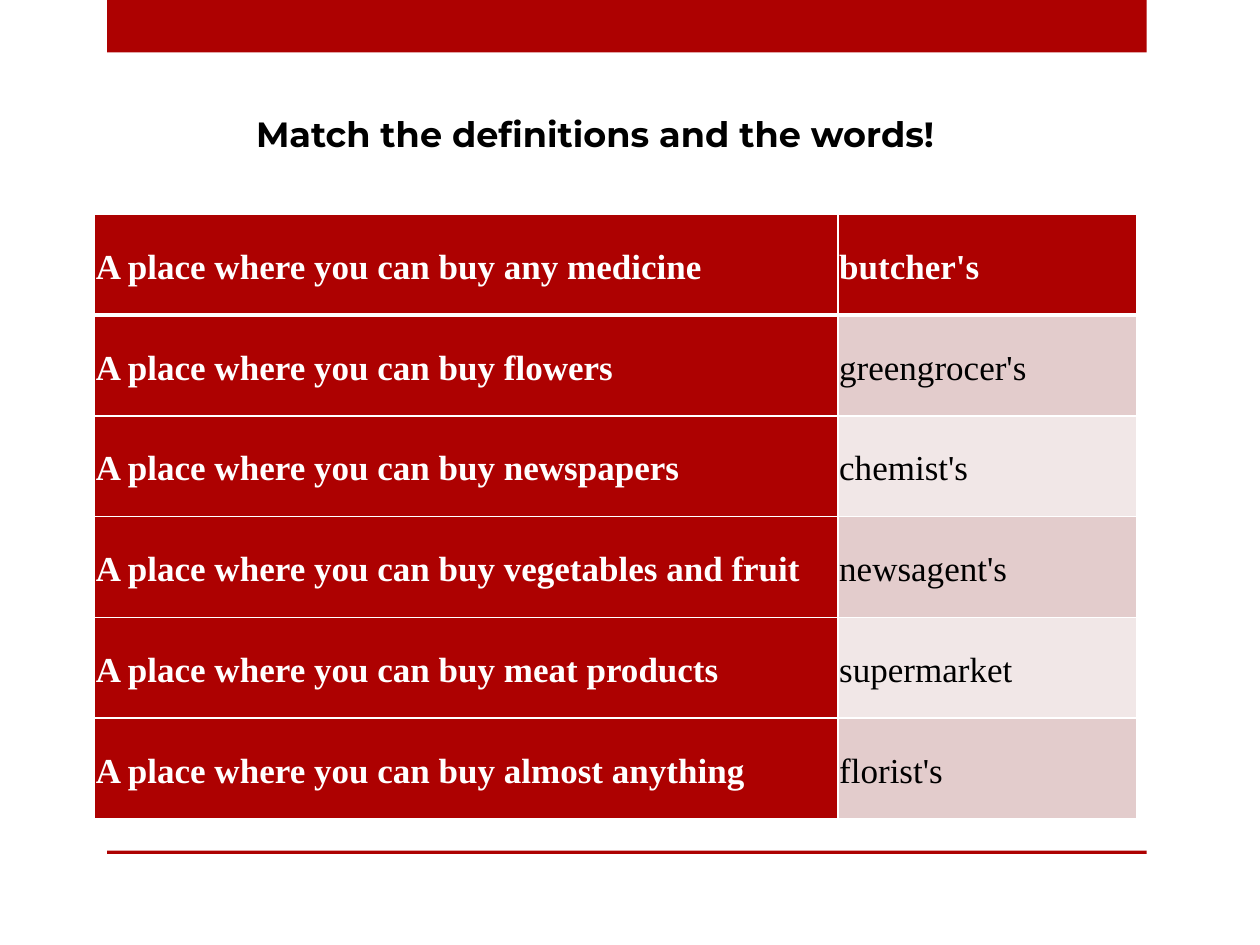
import pptx
import pptx.dml.color
import pptx.enum.shapes
import pptx.enum.text
import pptx.oxml
import pptx.oxml.ns
import pptx.util
from dataclasses import dataclass

Pt = pptx.util.Pt
ANCHOR = pptx.enum.text.MSO_ANCHOR
TITLE_ONLY = 5


@dataclass(frozen=True)
class Theme:
    red: str = "AD0101"
    white: str = "FFFFFF"
    black: str = "000000"
    bands: tuple = ("F1E7E7", "E3CCCC")
    heading_font: str = "Montserrat"
    table_font: str = "Times New Roman"
    text_size: int = 20
    thin_border: int = 1
    thick_border: int = 3


THEME = Theme()

MATCHES = [
    ("A place where you can buy any medicine", "butcher's"),
    ("A place where you can buy flowers", "greengrocer's"),
    ("A place where you can buy newspapers", "chemist's"),
    ("A place where you can buy vegetables and fruit", "newsagent's"),
    ("A place where you can buy meat products", "supermarket"),
    ("A place where you can buy almost anything", "florist's"),
]


def apply_format(target, values):
    for name, value in values.items():
        setattr(target, name, value)


def paint(fill, color):
    fill.solid()
    fill.fore_color.rgb = pptx.dml.color.RGBColor.from_string(color)


def write(frame, text, font, color, bold, paragraph_format):
    para = frame.paragraphs[0]
    apply_format(para, paragraph_format)
    span = para.add_run()
    span.text = text
    apply_format(span.font, {"name": font, "size": Pt(THEME.text_size), "bold": bold})
    span.font.color.rgb = pptx.dml.color.RGBColor.from_string(color)


def add_bar(page, top, height):
    bar = page.shapes.add_shape(
        pptx.enum.shapes.MSO_SHAPE.RECTANGLE, Pt(61.2), Pt(top), Pt(594), Pt(height)
    )
    bar.shadow.inherit = False
    paint(bar.fill, THEME.red)
    bar.line.fill.background()


def fill_title(page, text):
    box = page.shapes.title
    apply_format(box, {"left": Pt(127.4), "top": Pt(60.5),
                       "width": Pt(425.5), "height": Pt(31.7)})
    apply_format(box.text_frame, {"word_wrap": True, "vertical_anchor": ANCHOR.TOP})
    write(box.text_frame, text, THEME.heading_font, THEME.black, True,
          {"alignment": pptx.enum.text.PP_ALIGN.CENTER})


def set_borders(cell, widths):
    """Draw white cell borders; widths maps a side (L, R, T, B) to points."""
    properties = cell._tc.get_or_add_tcPr()
    for position, (side, width) in enumerate(widths.items()):
        border = pptx.oxml.parse_xml(
            f'<a:ln{side} {pptx.oxml.ns.nsdecls("a")} w="{Pt(width)}"><a:solidFill>'
            f'<a:srgbClr val="{THEME.white}"/></a:solidFill></a:ln{side}>'
        )
        properties.insert(position, border)


def format_cell(cell, text, row, column):
    """Style the first row and first column as headers, the rest as bands."""
    header = row == 0 or column == 0
    apply_format(cell, {"margin_left": Pt(0.75), "margin_right": Pt(0.75),
                        "margin_top": Pt(0.75), "margin_bottom": Pt(0.75),
                        "vertical_anchor": ANCHOR.MIDDLE})
    paint(cell.fill, THEME.red if header else THEME.bands[row % 2])
    thin, thick = THEME.thin_border, THEME.thick_border
    set_borders(cell, {"L": thin, "R": thin,
                       "T": thick if row == 1 else thin,
                       "B": thick if row == 0 else thin})
    write(cell.text_frame, text, THEME.table_font,
          THEME.white if header else THEME.black, header,
          {"line_spacing": 1.15, "space_after": Pt(10)})


def add_match_table(page, matches):
    column_widths = (424.8, 170.6)
    row_height = 57.6
    table = page.shapes.add_table(
        len(matches), len(column_widths), Pt(54), Pt(122.4),
        Pt(sum(column_widths)), Pt(row_height * len(matches))
    ).table
    for column, width in zip(table.columns, column_widths):
        column.width = Pt(width)
    for row, texts in enumerate(matches):
        table.rows[row].height = Pt(row_height)
        for column, text in enumerate(texts):
            format_cell(table.cell(row, column), text, row, column)


def main():
    deck = pptx.Presentation()
    apply_format(deck, {"slide_width": Pt(720), "slide_height": Pt(540)})
    page = deck.slides.add_slide(deck.slide_layouts[TITLE_ONLY])
    paint(page.background.fill, THEME.white)
    add_bar(page, top=0, height=30)
    add_bar(page, top=486, height=2)
    add_match_table(page, MATCHES)
    fill_title(page, "Match the definitions and the words!")
    deck.save("out.pptx")


if __name__ == "__main__":
    main()
